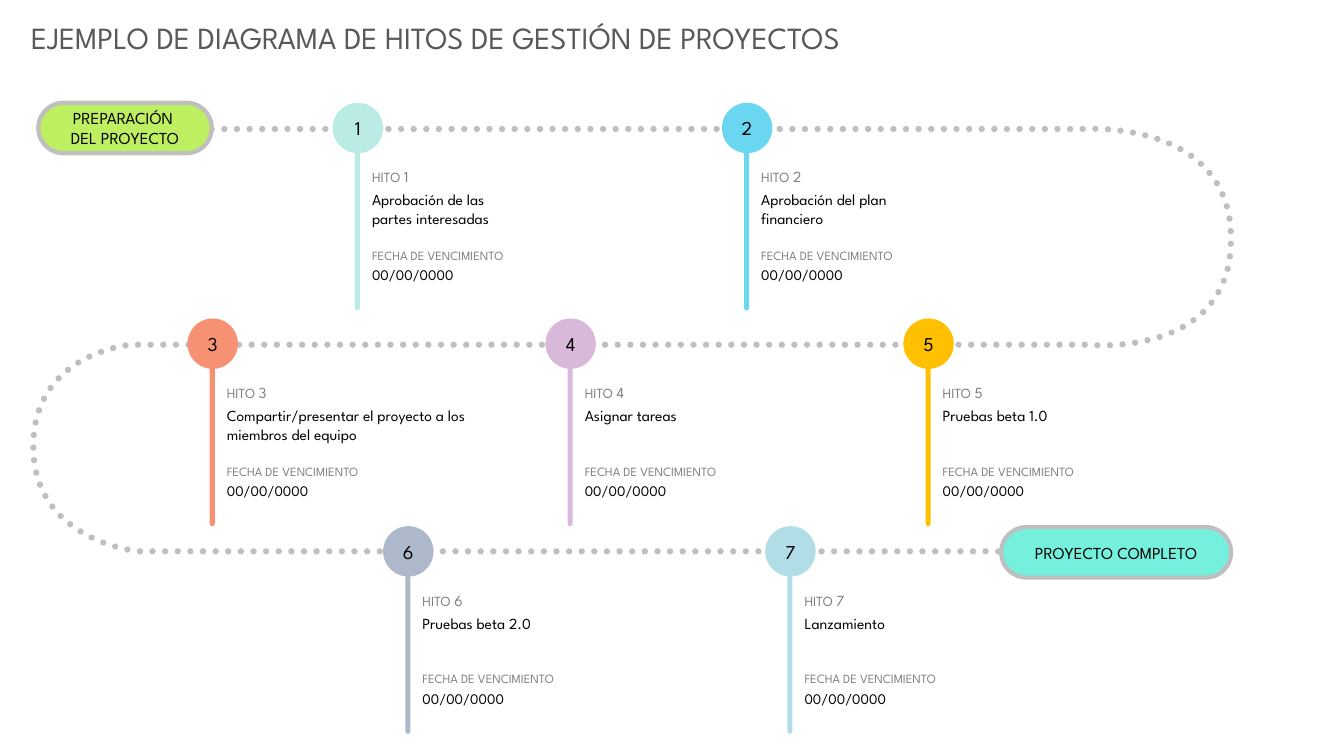
from pptx import Presentation
from pptx import util as u
from pptx.dml.color import RGBColor
from pptx.enum import dml, shapes, text
from pptx.oxml.ns import qn

HUES = {
    "title": "595959", "label": "808080", "ink": "000000", "trail": "BFBFBF",
    "start": "BEEF60", "end": "75F0DC", "mint": "BBEBE5", "sky": "6BD6F0",
    "coral": "F79173", "lilac": "D9B9D9", "gold": "FFC000", "slate": "ADB9CA",
    "ice": "B1DDE6",
}

ROWS = (1.02, 3.16, 5.22)
STEPS = [
    (3.3, 0, "mint", "Aprobación de las partes interesadas", 1.5),
    (7.16, 0, "sky", "Aprobación del plan financiero", 1.37),
    (1.86, 1, "coral", "Compartir/presentar el proyecto a los miembros del equipo", 2.46),
    (5.41, 1, "lilac", "Asignar tareas", 1.37),
    (8.96, 1, "gold", "Pruebas beta 1.0", 1.37),
    (3.8, 2, "slate", "Pruebas beta 2.0", 1.37),
    (7.59, 2, "ice", "Lanzamiento", 1.37),
]

START = (2.1, 1.28)
ROUTE = [
    [(10.73, 1.28)],
    [(10.73, 1.28), (12.21, 1.17), (12.21, 2.37)],
    [(12.21, 3.57), (10.78, 3.42), (10.78, 3.42)],
    [(1.31, 3.42)],
    [(1.31, 3.42), (0.33, 3.49), (0.33, 4.43)],
    [(0.33, 5.37), (1.37, 5.47), (1.37, 5.47)],
    [(10.28, 5.47)],
]


def curve(knots, count=32):
    for i in range(1, count + 1):
        t = i / count
        mix = ((1 - t) ** 3, 3 * t * (1 - t) ** 2, 3 * t * t * (1 - t), t ** 3)
        yield tuple(sum(m * k[axis] for m, k in zip(mix, knots)) for axis in (0, 1))


class Board:
    face = "League Spartan"

    def __init__(self, slide):
        self.slide = slide
        self.home = slide.shapes

    def hue(self, name):
        return RGBColor.from_string(HUES[name])

    def words(self, frame, runs, align=None, inset=0):
        frame.word_wrap = True
        frame.margin_left = frame.margin_right = u.Inches(inset)
        frame.margin_top = frame.margin_bottom = u.Inches(inset / 2)
        para = frame.paragraphs[0]
        para.alignment = align
        for wording, size, tone in runs:
            for n, line in enumerate(wording.split("\n")):
                if n:
                    para.add_line_break()
                run = para.add_run()
                run.text = line
                run.font.name = self.face
                run.font.size = u.Pt(size)
                run.font.color.rgb = self.hue(tone)

    def label(self, box, runs, inset=0, home=None):
        area = (home or self.home).add_textbox(*map(u.Inches, box))
        self.words(area.text_frame, runs, inset=inset)
        return area.text_frame

    def shape(self, kind, box, fill, wording="", size=12, edge=False, home=None):
        item = (home or self.home).add_shape(kind, *map(u.Inches, box))
        item.shadow.inherit = False
        item.fill.solid()
        item.fill.fore_color.rgb = self.hue(fill)
        if kind == shapes.MSO_SHAPE.ROUNDED_RECTANGLE:
            item.adjustments[0] = 0.5
        if edge:
            item.line.color.rgb = self.hue("trail")
            item.line.width = u.Pt(3)
        else:
            item.line.fill.background()
        if wording:
            item.text_frame.vertical_anchor = text.MSO_ANCHOR.MIDDLE
            self.words(item.text_frame, [(wording, size, "ink")], text.PP_ALIGN.CENTER)

    def pill(self, box, fill, wording):
        self.shape(shapes.MSO_SHAPE.ROUNDED_RECTANGLE, box, fill, wording, edge=True)

    def trail(self, start, route):
        pen = self.home.build_freeform(*map(u.Inches, start))
        last = start
        for leg in route:
            spots = leg if len(leg) == 1 else curve([last, *leg])
            pen.add_line_segments([tuple(map(u.Inches, s)) for s in spots], close=False)
            last = leg[-1]
        item = pen.convert_to_shape()
        item.shadow.inherit = False
        item.fill.background()
        item.line.color.rgb = self.hue("trail")
        item.line.width = u.Pt(4.5)
        item.line.dash_style = dml.MSO_LINE.ROUND_DOT
        item.element.spPr.find(qn("a:ln")).set("cap", "rnd")

    def step(self, num, left, top, fill, task, wide):
        home = self.home.add_group_shape().shapes
        side = left + 0.39
        self.shape(shapes.MSO_SHAPE.ROUNDED_RECTANGLE,
                   (left + 0.22, top + 0.19, 0.05, 1.87), fill, home=home)
        self.label((side, top + 0.64, 1.17, 0.26),
                   [("HITO", 10, "label"), (" ", 10.5, "label"), (str(num), 11, "label")],
                   home=home)
        self.label((side, top + 0.87, wide, 0.57), [(task, 11, "ink")], home=home)
        due = self.label((side, top + 1.44, 1.8, 0.2),
                         [("FECHA DE VENCIMIENTO", 9, "label")], home=home)
        due.paragraphs[0].space_after = u.Pt(3)
        self.label((side, top + 1.62, 0.9, 0.26), [("00/00/0000", 10.5, "ink")], home=home)
        self.shape(shapes.MSO_SHAPE.OVAL, (left, top, 0.5, 0.5), fill, str(num), 14, home=home)


def main():
    deck = Presentation()
    deck.slide_width, deck.slide_height = u.Inches(13.33), u.Inches(7.5)
    board = Board(deck.slides.add_slide(deck.slide_layouts[6]))
    title = board.label((0.21, 0.14, 10.31, 0.47),
                        [("EJEMPLO DE DIAGRAMA DE HITOS DE GESTIÓN DE PROYECTOS", 22, "title")],
                        inset=0.1)
    title.auto_size = text.MSO_AUTO_SIZE.SHAPE_TO_FIT_TEXT
    board.trail(START, ROUTE)
    board.pill((0.38, 1.02, 1.72, 0.5), "start", "PREPARACIÓN \nDEL PROYECTO")
    for num, (left, row, fill, task, wide) in enumerate(STEPS, 1):
        board.step(num, left, ROWS[row], fill, task, wide)
    board.pill((9.93, 5.23, 2.28, 0.5), "end", "PROYECTO COMPLETO")
    deck.save("out.pptx")


if __name__ == "__main__":
    main()
